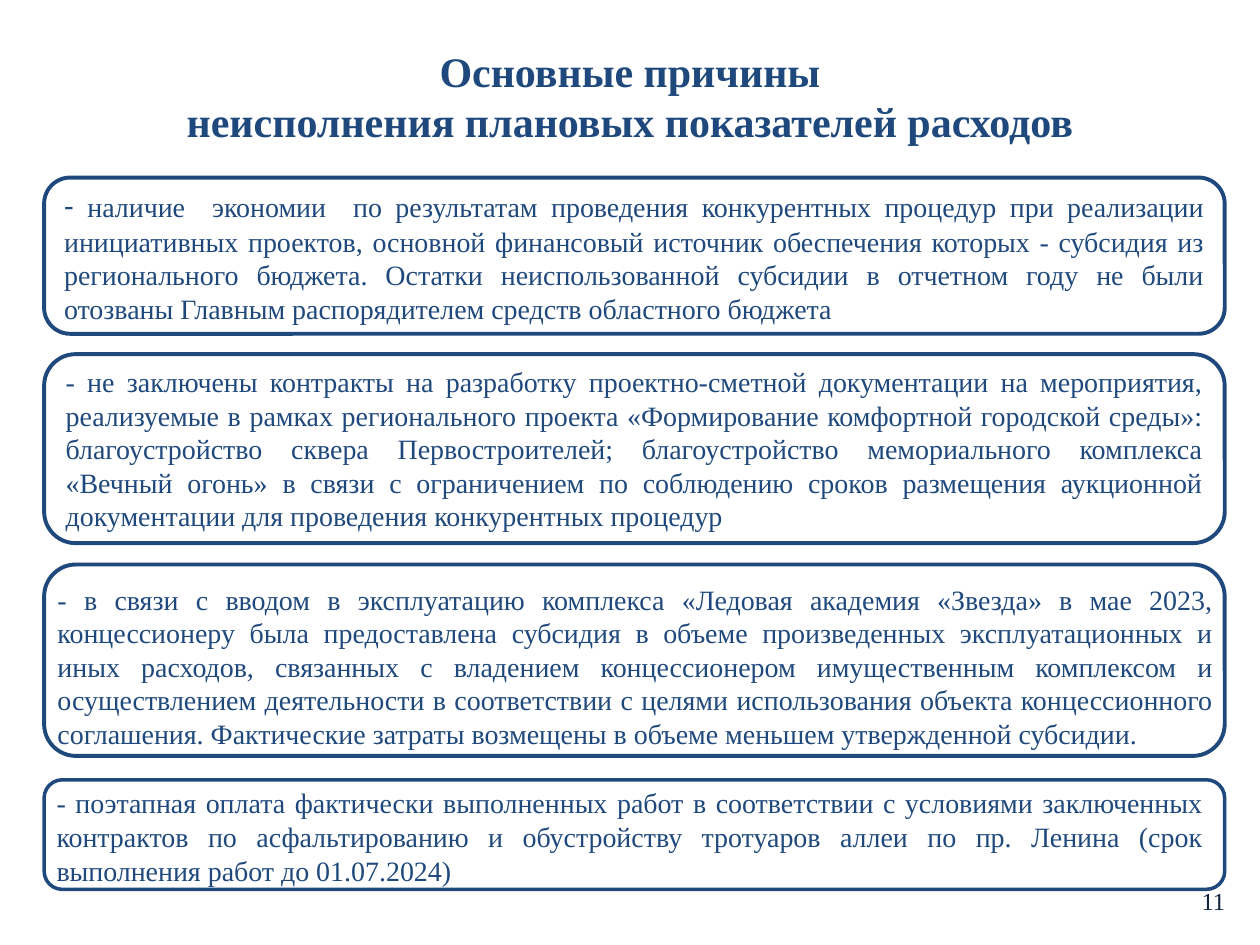
from dataclasses import dataclass

from pptx import Presentation
from pptx.dml.color import RGBColor
from pptx.enum.shapes import MSO_SHAPE as SHAPE
from pptx.enum.text import MSO_ANCHOR as ANCHOR, PP_ALIGN as ALIGN
from pptx.util import Cm, Pt


@dataclass(frozen=True)
class Theme:
    blue: RGBColor = RGBColor(0x1F, 0x49, 0x7D)
    navy: RGBColor = RGBColor(0x0F, 0x24, 0x3E)
    serif: str = "Times New Roman"
    sans: str = "Calibri"
    title: Pt = Pt(24)
    dash: Pt = Pt(18)
    body: Pt = Pt(16)
    number: Pt = Pt(14)


T = Theme()
BODY = {"name": T.serif, "size": T.body}
DASH = {"name": T.sans, "size": T.dash}
TITLE = {"name": T.serif, "size": T.title, "bold": True}
NUMBER = {"name": T.serif, "size": T.number}

LEFT, WIDTH = 0.89, 23.8

REASONS = [
    {
        "box": (LEFT, 3.58, WIDTH, 3.15),
        "runs": [
            ("- ", DASH),
            ("наличие  экономии  по результатам проведения конкурентных процедур "
             "при реализации инициативных проектов, основной финансовый источник "
             "обеспечения которых - субсидия из регионального бюджета. Остатки "
             "неиспользованной субсидии в отчетном году не были отозваны Главным "
             "распорядителем средств областного бюджета", BODY),
        ],
    },
    {
        "box": (LEFT, 7.14, WIDTH, 3.81),
        "runs": [
            ("- не заключены контракты на разработку проектно-сметной документации "
             "на мероприятия, реализуемые в рамках регионального проекта "
             "«Формирование комфортной городской среды»: благоустройство сквера "
             "Первостроителей; благоустройство мемориального комплекса «Вечный "
             "огонь» в связи с ограничением по соблюдению сроков размещения "
             "аукционной документации для проведения конкурентных процедур", BODY),
        ],
    },
    {
        "box": (LEFT, 11.38, WIDTH, 3.86),
        "label": (0.02, 0.23, WIDTH, 3.68),
        "runs": [
            ("- в связи с вводом в эксплуатацию комплекса «Ледовая академия "
             "«Звезда» в мае 2023, концессионеру была предоставлена субсидия в "
             "объеме произведенных эксплуатационных и иных расходов, связанных с "
             "владением концессионером имущественным комплексом и осуществлением "
             "деятельности в соответствии с целями использования объекта "
             "концессионного соглашения. Фактические затраты возмещены в объеме "
             "меньшем утвержденной субсидии.", BODY),
        ],
    },
    {
        "box": (LEFT, 15.72, WIDTH, 2.21),
        "label": (0, 0, 23.62, 2.31),
        "line": Pt(2),
        "runs": [
            ("- поэтапная оплата фактически выполненных работ в соответствии с "
             "условиями заключенных контрактов по асфальтированию и обустройству "
             "тротуаров аллеи по пр. Ленина (срок выполнения работ до "
             "01.07.2024)", BODY),
        ],
    },
]


def write(sp, paragraphs, align, anchor=ANCHOR.TOP, color=T.blue):
    tf = sp.text_frame
    tf.word_wrap = True
    tf.vertical_anchor = anchor
    for i, runs in enumerate(paragraphs):
        p = tf.paragraphs[0] if i == 0 else tf.add_paragraph()
        p.alignment = align
        for text, fmt in runs:
            r = p.add_run()
            r.text = text
            r.font.color.rgb = color
            for key, value in fmt.items():
                setattr(r.font, key, value)


def add_text(slide, box):
    return slide.shapes.add_textbox(*map(Cm, box))


def add_title(slide, box):
    lines = ["Основные причины", "неисполнения плановых показателей расходов"]
    write(add_text(slide, box), [[(line, TITLE)] for line in lines], ALIGN.CENTER)


def add_reason(slide, box, runs, label=None, line=Pt(2.25)):
    sp = slide.shapes.add_shape(SHAPE.ROUNDED_RECTANGLE, *map(Cm, box))
    sp.shadow.inherit = False
    sp.fill.background()
    sp.line.color.rgb = T.blue
    sp.line.width = line
    if label:
        dx, dy, width, height = label
        tb = add_text(slide, (box[0] + dx, box[1] + dy, width, height))
        write(tb, [runs], ALIGN.JUSTIFY)
    else:
        write(sp, [runs], ALIGN.JUSTIFY, ANCHOR.MIDDLE)


def add_number(slide, box):
    write(add_text(slide, box), [[("11", NUMBER)]], ALIGN.RIGHT, ANCHOR.MIDDLE, T.navy)


def main():
    prs = Presentation()
    prs.slide_width, prs.slide_height = Cm(25.4), Cm(19.05)
    slide = prs.slides.add_slide(prs.slide_layouts[6])
    add_number(slide, (23.83, 17.65, 1.12, 1.02))
    add_title(slide, (0, 0.79, 25.4, 2.31))
    for reason in REASONS:
        add_reason(slide, **reason)
    prs.save("out.pptx")


if __name__ == "__main__":
    main()
